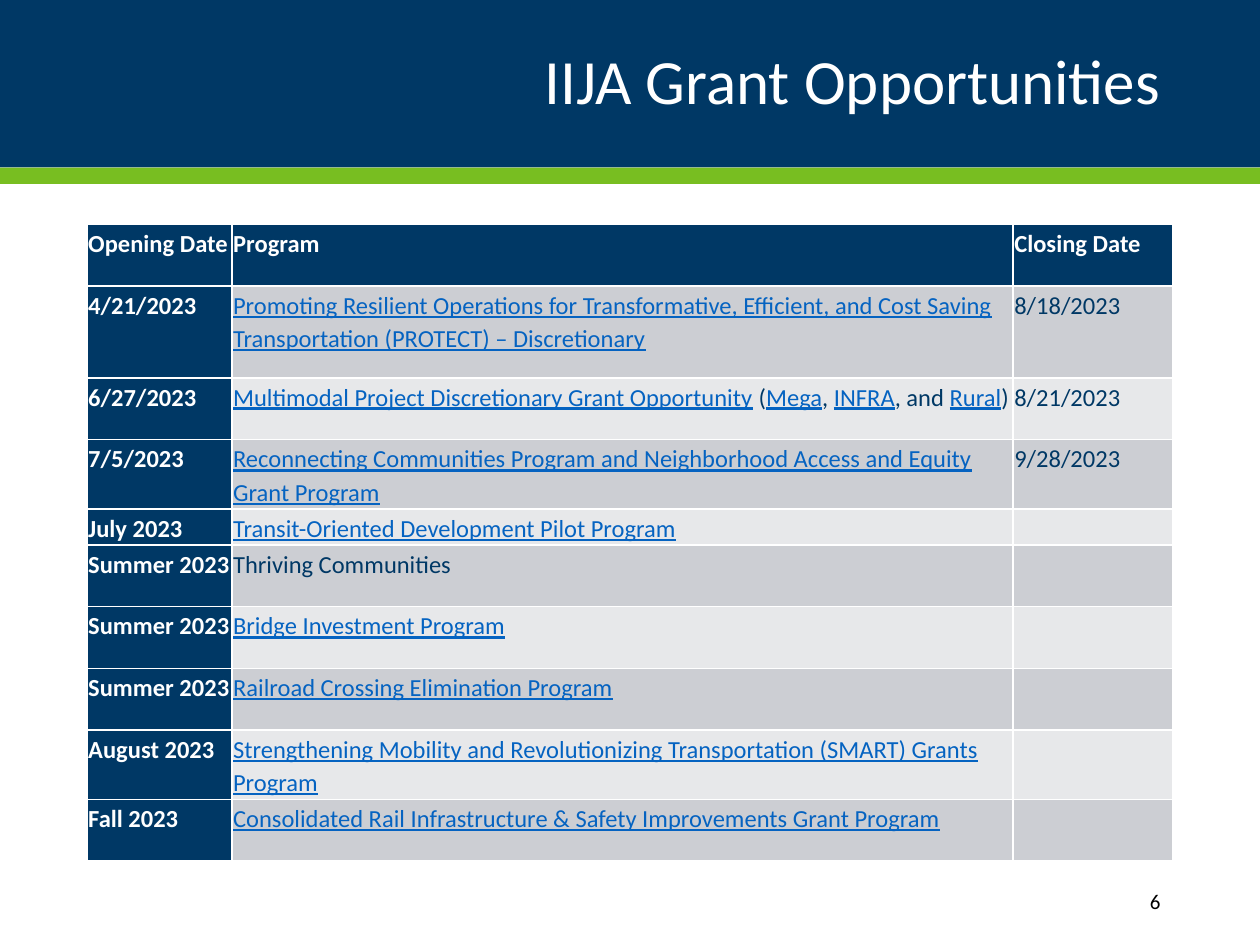
from lxml import etree
from pptx import Presentation
from pptx.dml.color import RGBColor
from pptx.enum.shapes import MSO_SHAPE
from pptx.enum.text import MSO_ANCHOR, PP_ALIGN
from pptx.oxml.ns import qn
from pptx.util import Inches, Pt

RECTANGLE = MSO_SHAPE.RECTANGLE
MIDDLE = MSO_ANCHOR.MIDDLE
RIGHT = PP_ALIGN.RIGHT
TITLE_ONLY = 5
FONT = "Calibri"
TABLE_SIZE = 14
TABLE_SPACING = 1.12
COLORS = {
    "navy": "003865",
    "green": "78BE21",
    "white": "FFFFFF",
    "black": "000000",
    "link": "0563C1",
    "dark_band": "CCCED3",
    "light_band": "E7E8EA",
}
COLUMN_WIDTHS = [1.15, 6.2, 1.27]
ROW_HEIGHTS = [0.49, 0.73, 0.49, 0.49, 0.25, 0.49, 0.49, 0.49, 0.49, 0.49]
HEADINGS = ["Opening Date", "Program", "Closing Date"]
GRANTS = [
    ("4/21/2023", [("Promoting Resilient Operations for Transformative, Efficient, and Cost Saving "
                    "Transportation (PROTECT) – Discretionary", True)], "8/18/2023"),
    ("6/27/2023", [("Multimodal Project Discretionary Grant Opportunity", True), (" (", False),
                   ("Mega", True), (", ", False), ("INFRA", True), (", and ", False),
                   ("Rural", True), (")", False)], "8/21/2023"),
    ("7/5/2023", [("Reconnecting Communities Program and Neighborhood Access and Equity "
                   "Grant Program", True)], "9/28/2023"),
    ("July 2023", [("Transit-Oriented Development Pilot Program", True)], ""),
    ("Summer 2023", [("Thriving Communities", False)], ""),
    ("Summer 2023", [("Bridge Investment Program", True)], ""),
    ("Summer 2023", [("Railroad Crossing Elimination Program", True)], ""),
    ("August 2023", [("Strengthening Mobility and Revolutionizing Transportation (SMART) Grants "
                      "Program", True)], ""),
    ("Fall 2023", [("Consolidated Rail Infrastructure & Safety Improvements Grant Program", True)], ""),
]


def color(name):
    return RGBColor.from_string(COLORS[name])


def add_span(para, text, size=TABLE_SIZE, ink="navy", bold=False, underline=False):
    span = para.add_run()
    span.text = text
    span.font.name = FONT
    span.font.size = Pt(size)
    span.font.color.rgb = color(ink)
    span.font.bold = bold
    span.font.underline = underline


def add_band(page, top, height, fill):
    band = page.shapes.add_shape(RECTANGLE, 0, Inches(top), Inches(10), Inches(height))
    band.shadow.inherit = False
    band.fill.solid()
    band.fill.fore_color.rgb = color(fill)
    band.line.fill.background()


def set_title(page, text):
    title = page.shapes.title
    title.left, title.top, title.width, title.height = map(Inches, (0.69, 0.17, 8.62, 1))
    title.text_frame.vertical_anchor = MIDDLE
    para = title.text_frame.paragraphs[0]
    para.alignment = RIGHT
    para.line_spacing = 0.9
    add_span(para, text, size=36, ink="white")
    title.element.getparent().append(title.element)


def fill_cell(cell, spans, fill, **text_format):
    cell.margin_left = cell.margin_right = cell.margin_top = cell.margin_bottom = Inches(0.01)
    cell.fill.solid()
    cell.fill.fore_color.rgb = color(fill)
    para = cell.text_frame.paragraphs[0]
    para.line_spacing = TABLE_SPACING
    for text, linked in spans:
        span_format = {"ink": "link", "underline": True} if linked else text_format
        add_span(para, text, **span_format)
    if not spans:
        etree.SubElement(para._p, qn("a:endParaRPr"), sz=str(TABLE_SIZE * 100))


def add_grant_table(page):
    frame = page.shapes.add_table(len(ROW_HEIGHTS), len(COLUMN_WIDTHS), Inches(0.69), Inches(1.78),
                                  Inches(sum(COLUMN_WIDTHS)), Inches(sum(ROW_HEIGHTS)))
    table = frame.table
    table.first_col = True
    for column, width in zip(table.columns, COLUMN_WIDTHS):
        column.width = Inches(width)
    for row, height in zip(table.rows, ROW_HEIGHTS):
        row.height = Inches(height)
    for index, heading in enumerate(HEADINGS):
        fill_cell(table.cell(0, index), [(heading, False)], "navy", ink="white", bold=True)
    for index, (opening, program, closing) in enumerate(GRANTS, start=1):
        band = "dark_band" if index % 2 else "light_band"
        fill_cell(table.cell(index, 0), [(opening, False)], "navy", ink="white", bold=True)
        fill_cell(table.cell(index, 1), program, band)
        fill_cell(table.cell(index, 2), [(closing, False)] if closing else [], band)


def add_page_number(page, number):
    box = page.shapes.add_textbox(Inches(8.11), Inches(6.95), Inches(1.2), Inches(0.4))
    box.text_frame.word_wrap = True
    box.text_frame.vertical_anchor = MIDDLE
    para = box.text_frame.paragraphs[0]
    para.alignment = RIGHT
    add_span(para, number, size=12, ink="black")


def main():
    deck = Presentation()
    deck.slide_width, deck.slide_height = Inches(10), Inches(7.5)
    page = deck.slides.add_slide(deck.slide_layouts[TITLE_ONLY])
    add_band(page, 0, 1.33, "navy")
    add_band(page, 1.33, 0.13, "green")
    set_title(page, "IIJA Grant Opportunities")
    add_grant_table(page)
    add_page_number(page, "6")
    deck.save("out.pptx")


if __name__ == "__main__":
    main()
